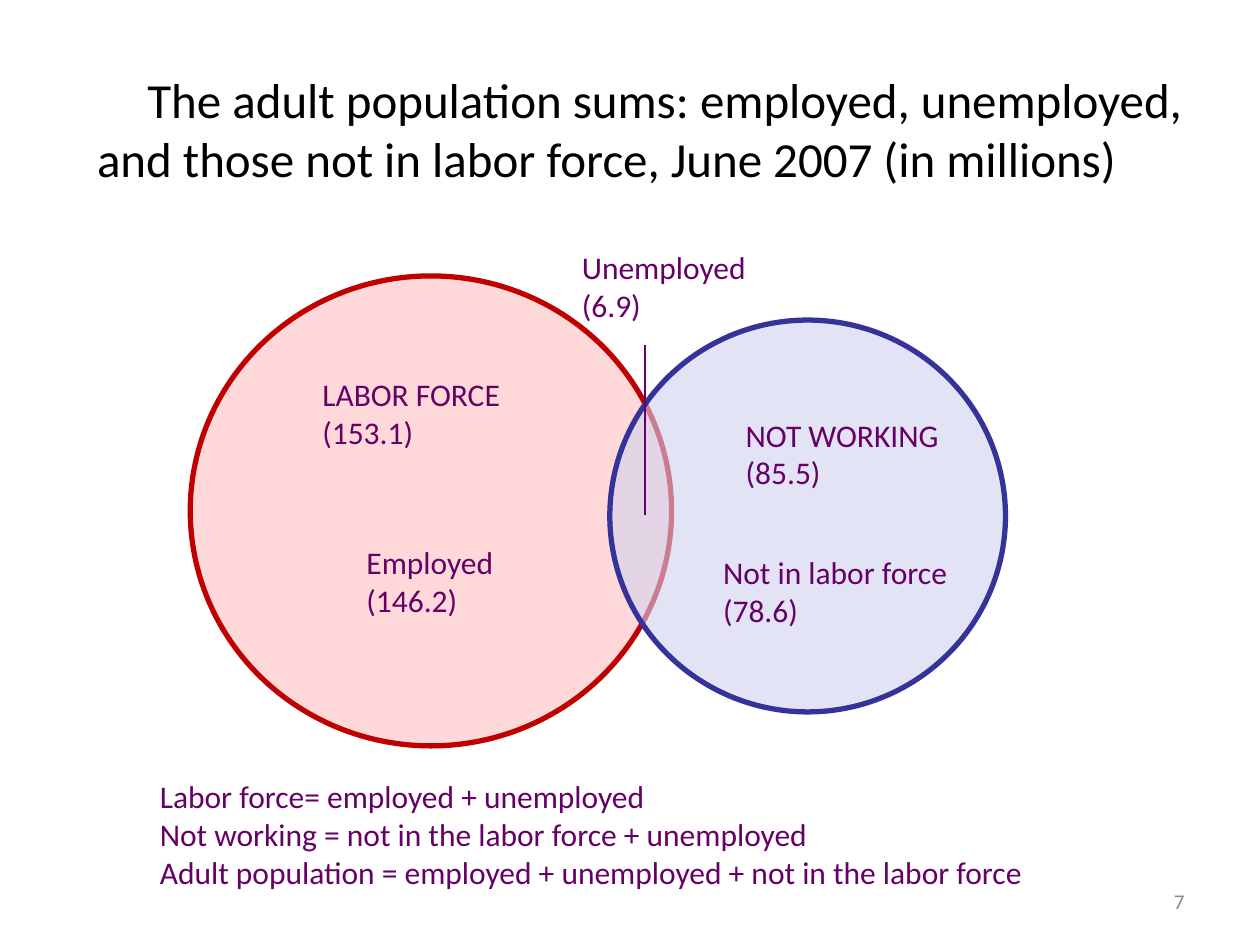
from pptx import Presentation
from pptx.dml.color import RGBColor
from pptx.enum.shapes import MSO_CONNECTOR, MSO_SHAPE
from pptx.enum.text import MSO_ANCHOR, MSO_AUTO_SIZE, PP_ALIGN
from pptx.oxml.ns import qn
from pptx.util import Inches, Pt
from lxml.etree import SubElement

BLACK = RGBColor(0x00, 0x00, 0x00)
GRAY = RGBColor(0x89, 0x89, 0x89)
PURPLE = RGBColor(0x66, 0x00, 0x66)
RED = RGBColor(0xC0, 0x00, 0x00)
PINK = RGBColor(0xFF, 0xC1, 0xC1)
BLUE = RGBColor(0x33, 0x33, 0x99)
LAVENDER = RGBColor(0xD1, 0xD1, 0xF0)


class VennSlide:
    font_name = "Calibri"

    def __init__(self, deck):
        self.slide = deck.slides.add_slide(deck.slide_layouts[5])

    def add_span(self, para, text, size, color, align=PP_ALIGN.LEFT):
        para.alignment = align
        span = para.add_run()
        span.text = text
        span.font.name = self.font_name
        span.font.size = Pt(size)
        span.font.color.rgb = color

    def title(self, text, left, top, width, height):
        box = self.slide.shapes.title
        box.left, box.top = Inches(left), Inches(top)
        box.width, box.height = Inches(width), Inches(height)
        frame = box.text_frame
        frame.auto_size = MSO_AUTO_SIZE.NONE
        frame.vertical_anchor = MSO_ANCHOR.TOP
        frame.margin_top = Inches(0.13)
        para = frame.paragraphs[0]
        self.add_span(para, text, 28, BLACK)
        para._p.get_or_add_pPr().set("indent", str(Inches(0.4)))

    def circle(self, left, top, width, height, fill, line):
        shape = self.slide.shapes.add_shape(
            MSO_SHAPE.OVAL, Inches(left), Inches(top), Inches(width), Inches(height))
        shape.shadow.inherit = False
        shape.fill.solid()
        shape.fill.fore_color.rgb = fill
        color = shape._element.spPr.find(qn("a:solidFill"))[0]
        SubElement(color, qn("a:alpha")).set("val", "60000")
        shape.line.color.rgb = line
        shape.line.width = Pt(3)

    def text(self, lines, left, top, width, height, wrap=False,
             size=18, color=PURPLE, align=PP_ALIGN.LEFT, anchor=MSO_ANCHOR.TOP):
        box = self.slide.shapes.add_textbox(
            Inches(left), Inches(top), Inches(width), Inches(height))
        frame = box.text_frame
        frame.word_wrap = wrap
        frame.vertical_anchor = anchor
        for index, line in enumerate(lines):
            para = frame.add_paragraph() if index else frame.paragraphs[0]
            self.add_span(para, line, size, color, align)

    def pointer(self, x, start, end):
        line = self.slide.shapes.add_connector(
            MSO_CONNECTOR.STRAIGHT, Inches(x), Inches(start), Inches(x), Inches(end))
        line.line.color.rgb = PURPLE
        line.line.width = Pt(0.75)
        SubElement(line._element.spPr, qn("a:effectLst"))


def main():
    deck = Presentation()
    deck.slide_width, deck.slide_height = Inches(10), Inches(7.5)
    venn = VennSlide(deck)

    venn.title("The adult population sums: employed, unemployed, and those "
               "not in labor force, June 2007 (in millions)", 0.67, 0.42, 9, 4.95)
    venn.circle(1.51, 2.19, 3.82, 3.73, PINK, RED)
    venn.circle(4.84, 2.54, 3.14, 3.11, LAVENDER, BLUE)

    labels = [
        ("LABOR FORCE", "(153.1)", 2.46, 2.93, 1.61),
        ("Employed", "(146.2)", 2.81, 4.26, 1.21),
        ("NOT WORKING", "(85.5)", 5.82, 3.25, 1.74),
        ("Not in labor force", "(78.6)", 5.64, 4.34, 1.98),
        ("Unemployed", "(6.9)", 4.52, 1.92, 1.56),
    ]
    for name, millions, left, top, width in labels:
        venn.text([name, millions], left, top, width, 0.7)

    venn.pointer(5.12, 4.09, 2.74)
    venn.text(["Labor force= employed + unemployed",
               "Not working = not in the labor force + unemployed",
               "Adult population = employed + unemployed + not in the labor force"],
              1.17, 6.12, 7.62, 1, wrap=True)
    venn.text(["7"], 7.17, 6.95, 2.33, 0.4, wrap=True, size=12, color=GRAY,
              align=PP_ALIGN.RIGHT, anchor=MSO_ANCHOR.MIDDLE)
    deck.save("out.pptx")


if __name__ == "__main__":
    main()
